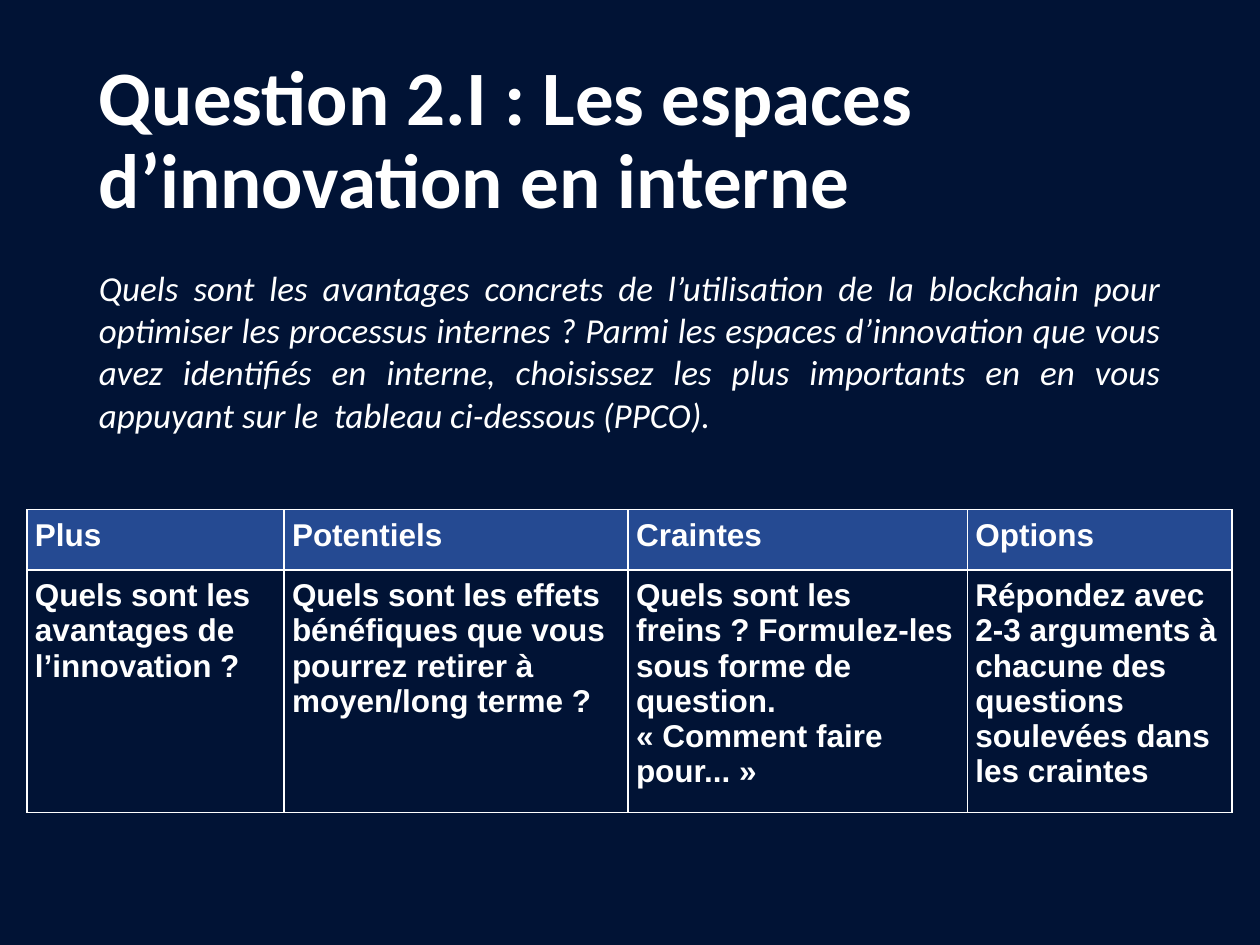
from lxml import etree
from pptx import Presentation
from pptx.dml.color import RGBColor
from pptx.enum import text
from pptx.oxml import ns
from pptx.util import Pt

WHITE = "FFFFFF"


def color(value):
    return RGBColor.from_string(value)


def add_run(paragraph, content, font, size, bold=False, italic=False):
    run = paragraph.add_run()
    run.text = content
    run.font.name = font
    run.font.size = Pt(size)
    run.font.bold = bold
    run.font.italic = italic
    run.font.color.rgb = color(WHITE)


presentation = Presentation()
presentation.slide_width = Pt(720)
presentation.slide_height = Pt(540)
slide = presentation.slides.add_slide(presentation.slide_layouts[6])
slide.background.fill.solid()
slide.background.fill.fore_color.rgb = color("011335")

title = slide.shapes.add_textbox(Pt(49.5), Pt(28.75), Pt(621), Pt(104.4))
title.text_frame.word_wrap = True
title.text_frame.vertical_anchor = text.MSO_ANCHOR.MIDDLE
paragraph = title.text_frame.paragraphs[0]
paragraph.line_spacing = 0.9
add_run(paragraph, "Question 2.I : Les espaces d’innovation en interne", "Calibri", 44, bold=True)

columns = [
    (146.9, "Plus", ["Quels sont les avantages de l’innovation ?"]),
    (196.6, "Potentiels", [
        "Quels sont les effets bénéfiques que vous pourrez retirer à moyen/long terme ?",
    ]),
    (193.9, "Craintes", [
        "Quels sont les freins ? Formulez-les sous forme de question.",
        "« Comment faire pour... »",
    ]),
    (151.2, "Options", [
        "Répondez avec 2-3 arguments à chacune des questions soulevées dans les craintes",
    ]),
]
table_width = sum(width for width, heading, prompts in columns)
table = slide.shapes.add_table(2, len(columns), Pt(15.5), Pt(291.3), Pt(table_width), Pt(164)).table
table.horz_banding = False
table.rows[0].height = Pt(34.5)
table.rows[1].height = Pt(129.5)

for column_index, (width, heading, prompts) in enumerate(columns):
    table.columns[column_index].width = Pt(width)
    for row_index, lines in enumerate([[heading], prompts]):
        cell = table.cell(row_index, column_index)
        cell.margin_left = cell.margin_right = Pt(4.5)
        cell.margin_top = cell.margin_bottom = Pt(4.5)
        properties = cell._tc.get_or_add_tcPr()
        for side in ("lnL", "lnR", "lnT", "lnB"):
            border = etree.SubElement(properties, ns.qn(f"a:{side}"), w=str(Pt(1)))
            fill = etree.SubElement(border, ns.qn("a:solidFill"))
            etree.SubElement(fill, ns.qn("a:srgbClr"), val=WHITE)
        if row_index == 0:
            cell.fill.solid()
            cell.fill.fore_color.rgb = color("254A92")
        else:
            cell.fill.background()
        for line_index, line in enumerate(lines):
            frame = cell.text_frame
            paragraph = frame.add_paragraph() if line_index else frame.paragraphs[0]
            add_run(paragraph, line, "Arial", 18, bold=True)

question = slide.shapes.add_textbox(Pt(49.5), Pt(149), Pt(621), Pt(113.8))
question.text_frame.word_wrap = True
paragraph = question.text_frame.paragraphs[0]
paragraph.alignment = text.PP_ALIGN.JUSTIFY
add_run(
    paragraph,
    "Quels sont les avantages concrets de l’utilisation de la blockchain pour optimiser "
    "les processus internes ? Parmi les espaces d’innovation que vous avez identifiés en "
    "interne, choisissez les plus importants en en vous appuyant sur le  tableau "
    "ci-dessous (PPCO).",
    "Calibri", 20, italic=True,
)

presentation.save("out.pptx")
